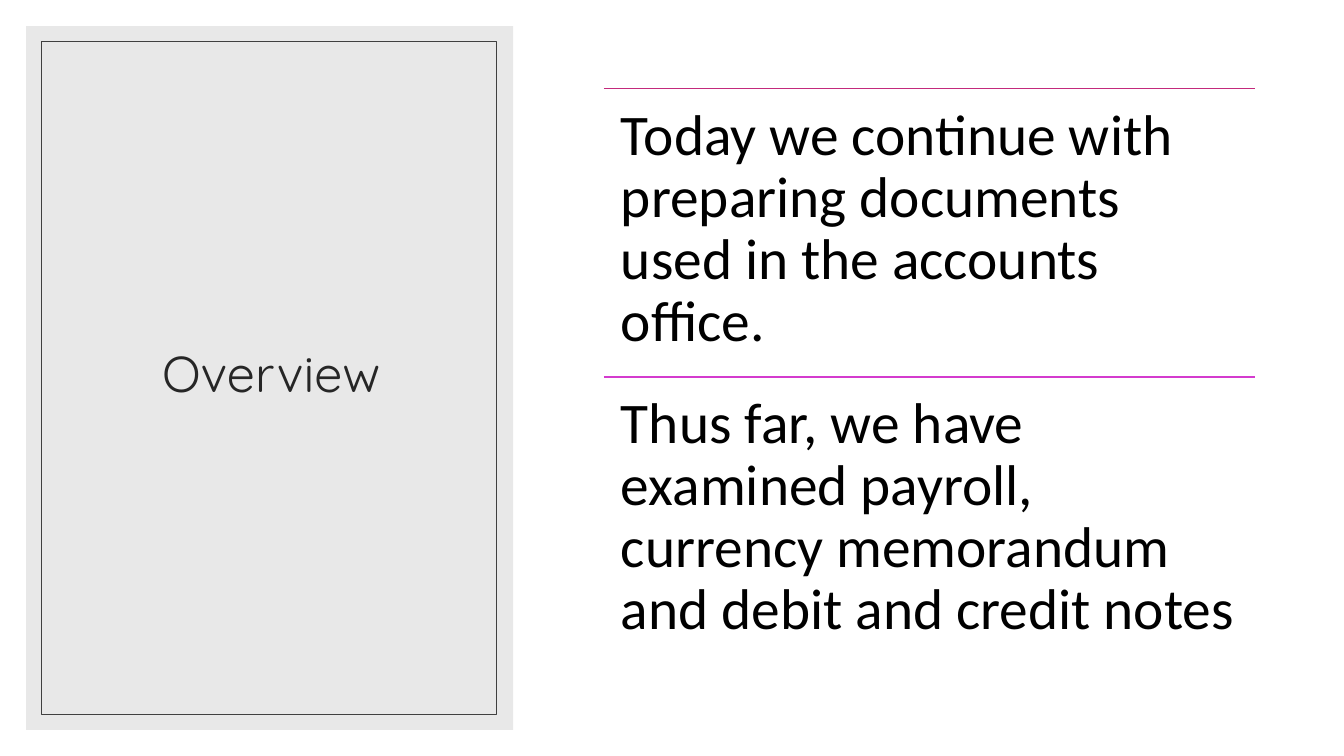
from dataclasses import dataclass

from lxml import etree
from pptx import Presentation
from pptx import util as u
from pptx.dml.color import RGBColor
from pptx.enum import shapes, text
from pptx.oxml import ns

Pt = u.Pt


@dataclass(frozen=True)
class Theme:
    white: str = "FFFFFF"
    panel: str = "D9D9D9"
    frame: str = "404040"
    title: str = "262626"
    body: str = "000000"
    rules: tuple = ("C32A7C", "D43BCE")
    title_font: str = "Quicksand"
    body_font: str = "Calibri"
    title_size: float = 36
    body_size: float = 41


class SlideBuilder:
    def __init__(self, prs, theme):
        self.theme = theme
        self.slide = prs.slides.add_slide(prs.slide_layouts[6])

    def apply(self, target, values):
        for name, value in values.items():
            setattr(target, name, value)

    def rect(self, box, fill=None, line=None, width=0.5, alpha=None):
        sp = self.slide.shapes.add_shape(
            shapes.MSO_SHAPE.RECTANGLE, *map(Pt, box))
        sp.shadow.inherit = False
        if fill:
            sp.fill.solid()
            sp.fill.fore_color.rgb = RGBColor.from_string(fill)
        else:
            sp.fill.background()
        if line:
            sp.line.color.rgb = RGBColor.from_string(line)
            sp.line.width = Pt(width)
        else:
            sp.line.fill.background()
        if alpha:
            color = sp.fill._xPr.find(".//" + ns.qn("a:srgbClr"))
            etree.SubElement(color, ns.qn("a:alpha"), val=str(alpha * 1000))

    def rule(self, x, y, width, color):
        sp = self.slide.shapes.add_connector(
            shapes.MSO_CONNECTOR.STRAIGHT, Pt(x), Pt(y), Pt(x + width), Pt(y))
        sp.line.color.rgb = RGBColor.from_string(color)
        sp.line.width = Pt(1)
        etree.SubElement(sp._element.spPr, ns.qn("a:effectLst"))

    def text(self, box, words, font, color, inset, frame, para):
        tf = self.slide.shapes.add_textbox(*map(Pt, box)).text_frame
        sides = ("left", "top", "right", "bottom")
        margins = {f"margin_{side}": Pt(gap) for side, gap in zip(sides, inset)}
        self.apply(tf, {"word_wrap": True, **margins, **frame})
        p = tf.paragraphs[0]
        self.apply(p, {"line_spacing": 0.9, **para})
        r = p.add_run()
        r.text = words
        self.apply(r.font, font)
        r.font.color.rgb = RGBColor.from_string(color)


def main():
    prs = Presentation()
    prs.slide_width, prs.slide_height = Pt(960), Pt(540)
    theme = Theme()
    s = SlideBuilder(prs, theme)

    s.rect((0, 0, 960, 540), fill=theme.white)
    s.rect((18.7, 18.7, 347.8, 502.6), fill=theme.panel, alpha=60)
    s.text((45.4, 43.9, 296.6, 449.3), "Overview",
           {"name": theme.title_font, "size": Pt(theme.title_size)},
           theme.title, (7.2, 3.6, 7.2, 3.6),
           {"vertical_anchor": text.MSO_ANCHOR.MIDDLE},
           {"alignment": text.PP_ALIGN.CENTER})
    s.rect((29.5, 29.5, 324.7, 481), line=theme.frame)

    left, top, width, height = 431.3, 63.4, 465.1, 205.9
    points = (
        "Today we continue with preparing documents used in the accounts office.",
        "Thus far, we have examined payroll, currency memorandum and debit and credit notes",
    )
    for i, (words, color) in enumerate(zip(points, theme.rules)):
        y = top + i * height
        s.rule(left, y, width, color)
        s.text((left, y, width, height), words,
               {"name": theme.body_font, "size": Pt(theme.body_size)},
               theme.body, (12.3,) * 4,
               {"vertical_anchor": text.MSO_ANCHOR.TOP},
               {"space_after": Pt(14)})

    prs.save("out.pptx")


if __name__ == "__main__":
    main()
